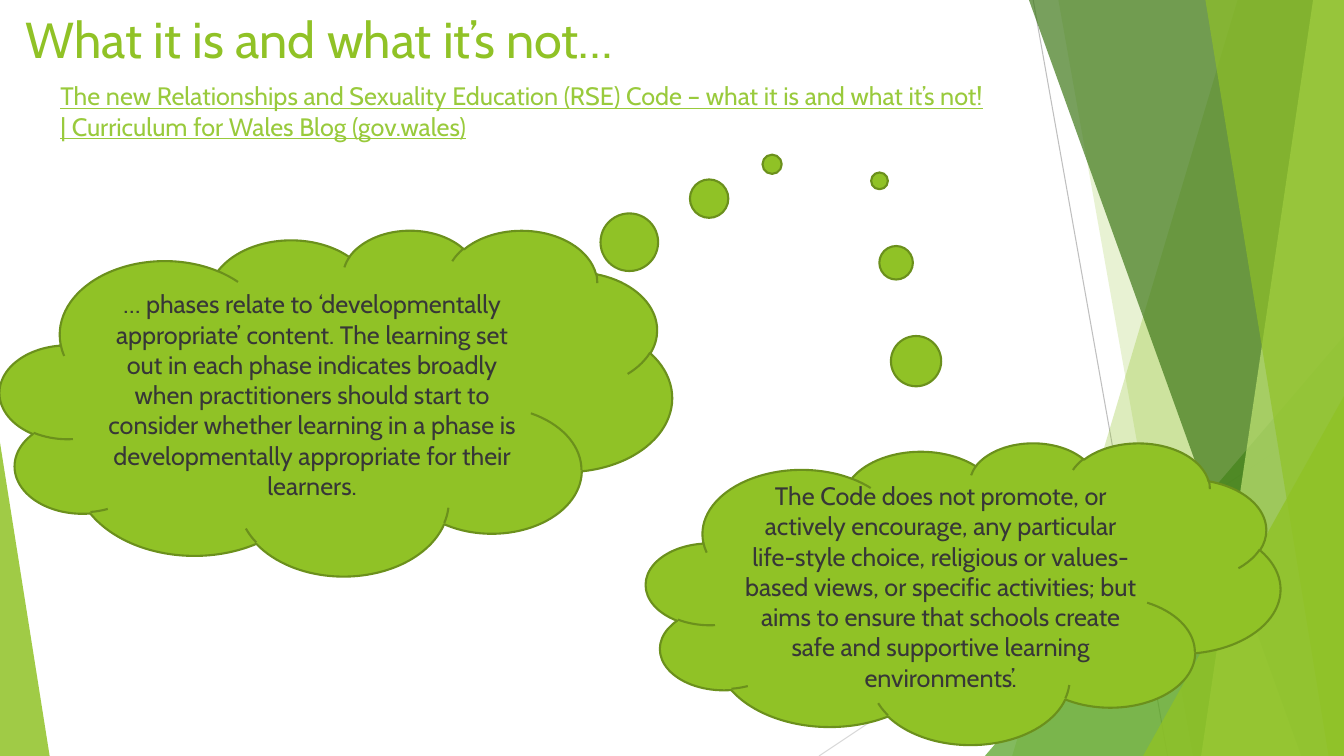
import pptx
import pptx.dml.color
import pptx.enum.shapes
import pptx.enum.text
import pptx.oxml
import pptx.oxml.ns
import pptx.util

Pt = pptx.util.Pt
Shapes = pptx.enum.shapes.MSO_SHAPE
Align = pptx.enum.text.PP_ALIGN
Anchor = pptx.enum.text.MSO_ANCHOR
WIDTH, HEIGHT = 960, 540
GREEN = "90C226"


def paint(color_format, colour, opacity=100):
    """Set a solid colour; opacity is in percent."""
    color_format.rgb = pptx.dml.color.RGBColor.from_string(colour)
    if opacity < 100:
        # The colour element just created is the last srgbClr of its parent
        alpha = pptx.oxml.parse_xml(
            f'<a:alpha {pptx.oxml.ns.nsdecls("a")} val="{opacity * 1000}"/>')
        color_format._xFill.find(pptx.oxml.ns.qn("a:srgbClr")).append(alpha)


def write(shape, text, size, colour, align, anchor):
    frame = shape.text_frame
    frame.word_wrap = True
    frame.auto_size = pptx.enum.text.MSO_AUTO_SIZE.NONE
    frame.vertical_anchor = anchor
    paragraph = frame.paragraphs[0]
    paragraph.alignment = align
    run = paragraph.add_run()
    run.text = text
    run.font.name = "Cabin"
    run.font.size = Pt(size)
    paint(run.font.color, colour)
    return paragraph


presentation = pptx.Presentation()
presentation.slide_width, presentation.slide_height = Pt(WIDTH), Pt(HEIGHT)
slide = presentation.slides.add_slide(presentation.slide_layouts[1])
title, body = slide.placeholders

# Thin lines behind the green facets
for start_x, start_y, end_x, colour in [(738, 0, 834, "BFBFBF"),
                                        (WIDTH, 290, 585, "D9D9D9")]:
    line = slide.shapes.add_connector(
        pptx.enum.shapes.MSO_CONNECTOR.STRAIGHT,
        Pt(start_x), Pt(start_y), Pt(end_x), Pt(HEIGHT))
    line.line.width = Pt(0.75)
    line.line.fill.solid()
    paint(line.line.fill.fore_color, colour)
    line._element.spPr.append(
        pptx.oxml.parse_xml(f'<a:effectLst {pptx.oxml.ns.nsdecls("a")}/>'))

# Bands run from a top x to a bottom x and fill to the right edge;
# triangles stand on the bottom edge: left, top, width, apex position
facets = [
    ("band", (884, 723), GREEN, 30),
    ("band", (756, 852), GREEN, 20),
    ("triangle", (703.5, 240, 256.5, 1), "54A021", 72),
    ("band", (735, 929.5), "3F7819", 70),
    ("band", (938, 858), "C0E474", 70),
    ("band", (861, 949), GREEN, 65),
    ("triangle", (816.5, 283, 143.5, 1), GREEN, 80),
    ("triangle", (0, 316, 35.5, 0), GREEN, 85),
]
for kind, geometry, colour, opacity in facets:
    if kind == "band":
        top_x, bottom_x = geometry
        builder = slide.shapes.build_freeform(Pt(top_x), 0)
        builder.add_line_segments([(Pt(WIDTH), 0), (Pt(WIDTH), Pt(HEIGHT)),
                                   (Pt(bottom_x), Pt(HEIGHT))])
        facet = builder.convert_to_shape()
    else:
        left, top, width, apex = geometry
        facet = slide.shapes.add_shape(Shapes.ISOSCELES_TRIANGLE, Pt(left), Pt(top),
                                       Pt(width), Pt(HEIGHT - top))
        facet.adjustments[0] = apex
    facet.shadow.inherit = False
    facet.line.fill.background()
    facet.fill.solid()
    paint(facet.fill.fore_color, colour, opacity) if opacity == 100 else None
    paint(facet.fill.fore_color, colour, opacity)

title.left, title.top, title.width, title.height = Pt(11), Pt(2), Pt(677), Pt(104)
write(title, "What it is and what it’s not…", 36, GREEN, Align.LEFT, Anchor.TOP)

body.left, body.top, body.width, body.height = Pt(36), Pt(54), Pt(677), Pt(58)
paragraph = write(
    body, "The new Relationships and Sexuality Education (RSE) Code – what it is and "
    "what it’s not! | Curriculum for Wales Blog (gov.wales)",
    18, "99CA3C", Align.LEFT, Anchor.TOP)
paragraph.space_before = Pt(10)
paragraph.runs[0].font.underline = True
properties = paragraph._p.get_or_add_pPr()
properties.set("marL", "0")
properties.set("indent", "0")
properties.append(pptx.oxml.parse_xml(f'<a:buNone {pptx.oxml.ns.nsdecls("a")}/>'))

# Thought clouds: box, tail position, text
clouds = [
    ((461.5, 316, 453, 215.5), (-0.132, -1.367),
     "The Code does not promote, or actively encourage, any particular life-style "
     "choice, religious or values-based views, or specific activities; but aims to "
     "ensure that schools create safe and supportive learning environments’."),
    ((0, 164, 480, 247), (0.649, -0.689),
     "… phases relate to ‘developmentally appropriate’ content. The learning set out "
     "in each phase indicates broadly when practitioners should start to consider "
     "whether learning in a phase is developmentally appropriate for their learners."),
]
for box, tail, text in clouds:
    cloud = slide.shapes.add_shape(Shapes.CLOUD_CALLOUT, *map(Pt, box))
    cloud.adjustments[0], cloud.adjustments[1] = tail
    cloud.shadow.inherit = False
    cloud.fill.solid()
    paint(cloud.fill.fore_color, GREEN)
    cloud.line.width = Pt(1.5)
    cloud.line.fill.solid()
    paint(cloud.line.fill.fore_color, "6B901C")
    write(cloud, text, 18, "373737", Align.CENTER, Anchor.MIDDLE)

presentation.save("out.pptx")
